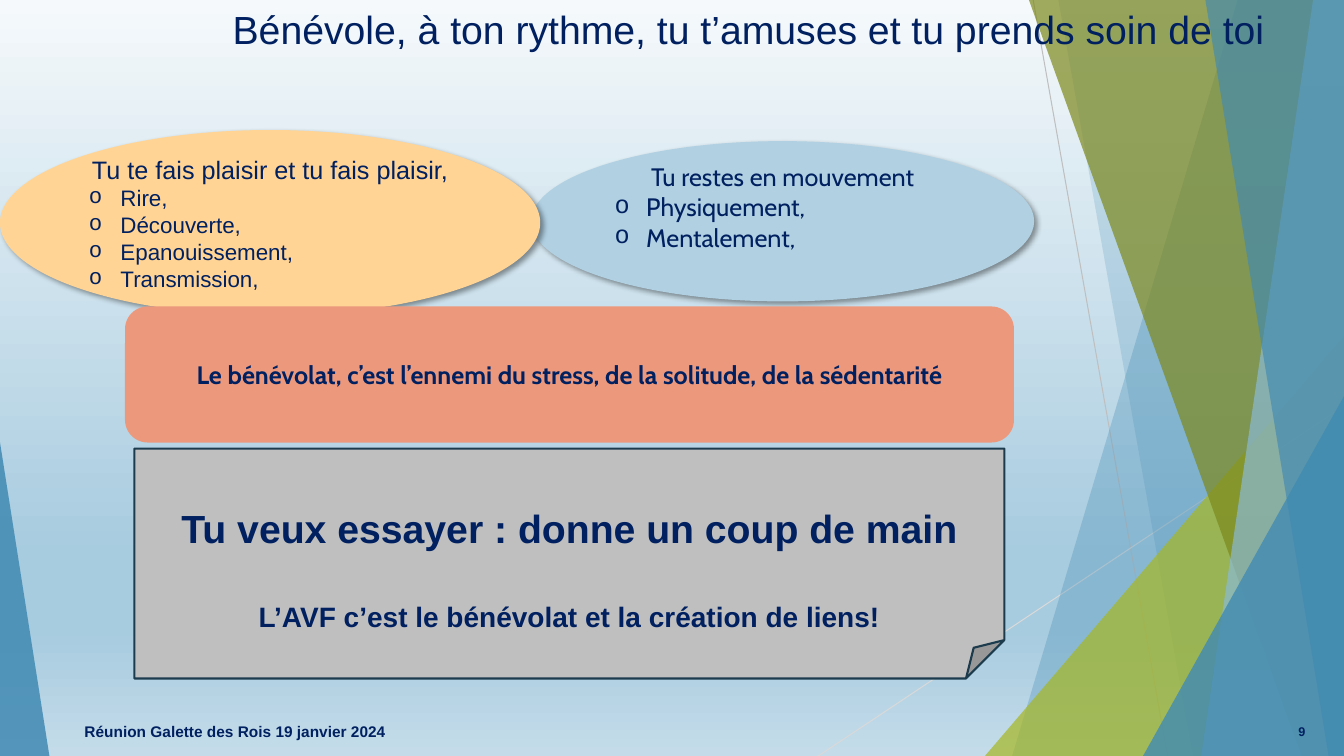
from dataclasses import dataclass, field
from typing import Optional, Union

from lxml import etree
from pptx import Presentation
from pptx.dml.color import RGBColor
from pptx.enum.shapes import MSO_CONNECTOR, MSO_SHAPE
from pptx.enum.text import MSO_ANCHOR, MSO_AUTO_SIZE, PP_ALIGN
from pptx.oxml.ns import qn
from pptx.util import Pt

ELLIPSE = MSO_SHAPE.OVAL
ROUNDED = MSO_SHAPE.ROUNDED_RECTANGLE
FOLDED = MSO_SHAPE.FOLDED_CORNER
TRIANGLE = MSO_SHAPE.ISOSCELES_TRIANGLE
STRAIGHT = MSO_CONNECTOR.STRAIGHT
LEFT, CENTER = PP_ALIGN.LEFT, PP_ALIGN.CENTER
TOP, MIDDLE = MSO_ANCHOR.TOP, MSO_ANCHOR.MIDDLE
NO_AUTOFIT = MSO_AUTO_SIZE.NONE
WIDTH, HEIGHT = 960, 540
BULLET_INDENT = 22.5


@dataclass(frozen=True)
class Theme:
    text: str = "002060"
    blue: str = "418AB3"
    pale_blue: str = "8ABAD4"
    green: str = "A6B727"
    olive: str = "7D891D"
    sky: str = "B1D1E3"
    peach: str = "FFD495"
    coral: str = "EC987D"
    grey: str = "BFBFBF"
    light_grey: str = "D9D9D9"
    outline: str = "1C3C4E"
    background: tuple = ((0, "F5F9FB"), (74, "A7CBDF"), (83, "A7CBDF"), (100, "C4DCEA"))
    body_font: str = "Arial"
    accent_font: str = "Cabin"
    bullet_font: str = "Courier New"
    headline: float = 28
    subhead: float = 20
    body: float = 18
    item: float = 16
    footer: float = 11
    number: float = 9


THEME = Theme()


@dataclass(frozen=True)
class Facet:
    """A band reaching the right edge, with a slanted left side."""
    top_x: float
    bottom_x: float
    color: str
    opacity: int


@dataclass(frozen=True)
class Corner:
    """A right triangle standing on the bottom edge."""
    left: float
    width: float
    height: float
    apex: float
    color: str
    opacity: int


@dataclass(frozen=True)
class Line:
    text: str
    size: float = THEME.body
    font: str = THEME.body_font
    bold: bool = False
    align: PP_ALIGN = CENTER
    bullet: bool = False
    space_before: float = 0


@dataclass(frozen=True)
class Panel:
    kind: MSO_SHAPE
    box: tuple
    color: str
    lines: list = field(default_factory=list)
    outline: Optional[str] = None
    shadow: bool = False
    inset_top: float = 3.6
    inset_bottom: float = 3.6


DECOR: list[Union[Facet, Corner]] = [
    Facet(884, 723, THEME.blue, 30),
    Facet(756, 852, THEME.blue, 20),
    Corner(703.5, 256.5, 300, 1, THEME.green, 72),
    Facet(735, 929.5, THEME.olive, 70),
    Facet(938, 858, THEME.pale_blue, 70),
    Facet(861, 949, THEME.blue, 65),
    Corner(816.5, 143.5, 257, 1, THEME.blue, 80),
    Corner(0, 35.3, 224, 0, THEME.blue, 85),
]
RAYS = [
    ((738, 0), (834, HEIGHT), THEME.grey),
    ((WIDTH, 290), (584.5, HEIGHT), THEME.light_grey),
]


def bullet(text: str, size: float, font: str) -> Line:
    return Line(text, size, font, align=LEFT, bullet=True)


PANELS = [
    Panel(ELLIPSE, (379.4, 100.8, 359.3, 114.5), THEME.sky, [
        Line("Tu restes en mouvement", font=THEME.accent_font),
        *[bullet(text, THEME.body, THEME.accent_font)
          for text in ("Physiquement,", "Mentalement,")],
    ], shadow=True, inset_bottom=24),
    Panel(ELLIPSE, (0, 92.9, 385.9, 132.5), THEME.peach, [
        Line("Tu te fais plaisir et tu fais plaisir,"),
        *[bullet(text, THEME.item, THEME.body_font)
          for text in ("Rire,", "Découverte,", "Epanouissement,", "Transmission,")],
    ], shadow=True),
    Panel(ROUNDED, (89.3, 218.9, 635, 97.2), THEME.coral, [
        Line("Le bénévolat, c’est l’ennemi du stress, de la solitude, de la sédentarité",
             font=THEME.accent_font, bold=True),
    ]),
    Panel(FOLDED, (96, 320.4, 621.4, 164.2), THEME.grey, [
        Line("Tu veux essayer : donne un coup de main", THEME.headline, bold=True),
        Line("L’AVF c’est le bénévolat et la création de liens!", THEME.subhead,
             bold=True, space_before=34),
    ], outline=THEME.outline, inset_top=38),
]
FOOTERS = [
    ((53.3, 504.7, 496, 35.3),
     Line("Réunion Galette des Rois 19 janvier 2024", THEME.footer, bold=True, align=LEFT)),
    ((906.5, 504.7, 46.8, 35.3), Line("9", THEME.number, bold=True)),
]


def paint(shape, color: str, opacity: int = 100) -> None:
    shape.shadow.inherit = False
    shape.fill.solid()
    shape.fill.fore_color.rgb = RGBColor.from_string(color)
    shape.line.fill.background()
    if opacity < 100:
        srgb = shape._element.spPr.find(qn("a:solidFill")).find(qn("a:srgbClr"))
        etree.SubElement(srgb, qn("a:alpha"), val=str(opacity * 1000))


def paint_background(slide) -> None:
    fill = slide.background.fill
    fill.gradient()
    fill.gradient_angle = 270
    stops = slide._element.find(".//" + qn("a:gsLst"))
    for stop in list(stops):
        stops.remove(stop)
    for position, color in THEME.background:
        stop = etree.SubElement(stops, qn("a:gs"), pos=str(position * 1000))
        etree.SubElement(stop, qn("a:srgbClr"), val=color)


def add_ray(slide, start: tuple, end: tuple, color: str) -> None:
    ray = slide.shapes.add_connector(STRAIGHT, *map(Pt, start + end))
    ray.line.color.rgb = RGBColor.from_string(color)
    ray.line.width = Pt(0.75)
    etree.SubElement(ray._element.spPr, qn("a:effectLst"))


def add_decor(slide, item: Union[Facet, Corner]) -> None:
    if isinstance(item, Facet):
        builder = slide.shapes.build_freeform(item.top_x, 0, scale=float(Pt(1)))
        builder.add_line_segments([(WIDTH, 0), (WIDTH, HEIGHT), (item.bottom_x, HEIGHT)])
        shape = builder.convert_to_shape()
    else:
        box = (item.left, HEIGHT - item.height, item.width, item.height)
        shape = slide.shapes.add_shape(TRIANGLE, *map(Pt, box))
        shape.adjustments[0] = item.apex
    paint(shape, item.color, item.opacity)


def write(shape, lines: list[Line], anchor: MSO_ANCHOR = MIDDLE) -> None:
    frame = shape.text_frame
    frame.text = "\n".join(line.text for line in lines)
    frame.word_wrap = True
    frame.auto_size = NO_AUTOFIT
    frame.vertical_anchor = anchor
    for paragraph, line in zip(frame.paragraphs, lines):
        paragraph.alignment = line.align
        paragraph.space_before = Pt(line.space_before)
        if line.bullet:
            properties = paragraph._p.get_or_add_pPr()
            properties.set("marL", str(Pt(BULLET_INDENT)))
            properties.set("indent", str(-Pt(BULLET_INDENT)))
            etree.SubElement(properties, qn("a:buFont"), typeface=THEME.bullet_font)
            etree.SubElement(properties, qn("a:buChar"), char="o")
        for run in paragraph.runs:
            run.font.name = line.font
            run.font.size = Pt(line.size)
            run.font.bold = line.bold
            run.font.color.rgb = RGBColor.from_string(THEME.text)


def add_panel(slide, panel: Panel) -> None:
    shape = slide.shapes.add_shape(panel.kind, *map(Pt, panel.box))
    paint(shape, panel.color)
    if panel.outline:
        shape.line.color.rgb = RGBColor.from_string(panel.outline)
        shape.line.width = Pt(1.5)
    if panel.shadow:
        effects = shape._element.spPr.find(qn("a:effectLst"))
        shadow = etree.SubElement(effects, qn("a:outerShdw"), blurRad=str(Pt(4)),
                                  dist=str(Pt(3)), dir="2700000", rotWithShape="0")
        color = etree.SubElement(shadow, qn("a:srgbClr"), val="000000")
        etree.SubElement(color, qn("a:alpha"), val="40000")
    write(shape, panel.lines)
    shape.text_frame.margin_top = Pt(panel.inset_top)
    shape.text_frame.margin_bottom = Pt(panel.inset_bottom)


def place_title(slide) -> None:
    title = slide.shapes.title
    title.left, title.top, title.width, title.height = map(Pt, (97.2, 0, 838.8, 72.7))
    write(title, [Line("Bénévole, à ton rythme, tu t’amuses et tu prends soin de toi",
                       THEME.headline, align=LEFT)], TOP)
    title.text_frame.margin_left = Pt(69)
    # Keeps the title above the decoration drawn before it.
    slide.shapes._spTree.append(title._element)


def main() -> None:
    presentation = Presentation()
    presentation.slide_width, presentation.slide_height = Pt(WIDTH), Pt(HEIGHT)
    slide = presentation.slides.add_slide(presentation.slide_layouts[5])
    paint_background(slide)
    for ray in RAYS:
        add_ray(slide, *ray)
    for item in DECOR:
        add_decor(slide, item)
    place_title(slide)
    for box, line in FOOTERS:
        write(slide.shapes.add_textbox(*map(Pt, box)), [line])
    for panel in PANELS:
        add_panel(slide, panel)
    presentation.save("out.pptx")


if __name__ == "__main__":
    main()
